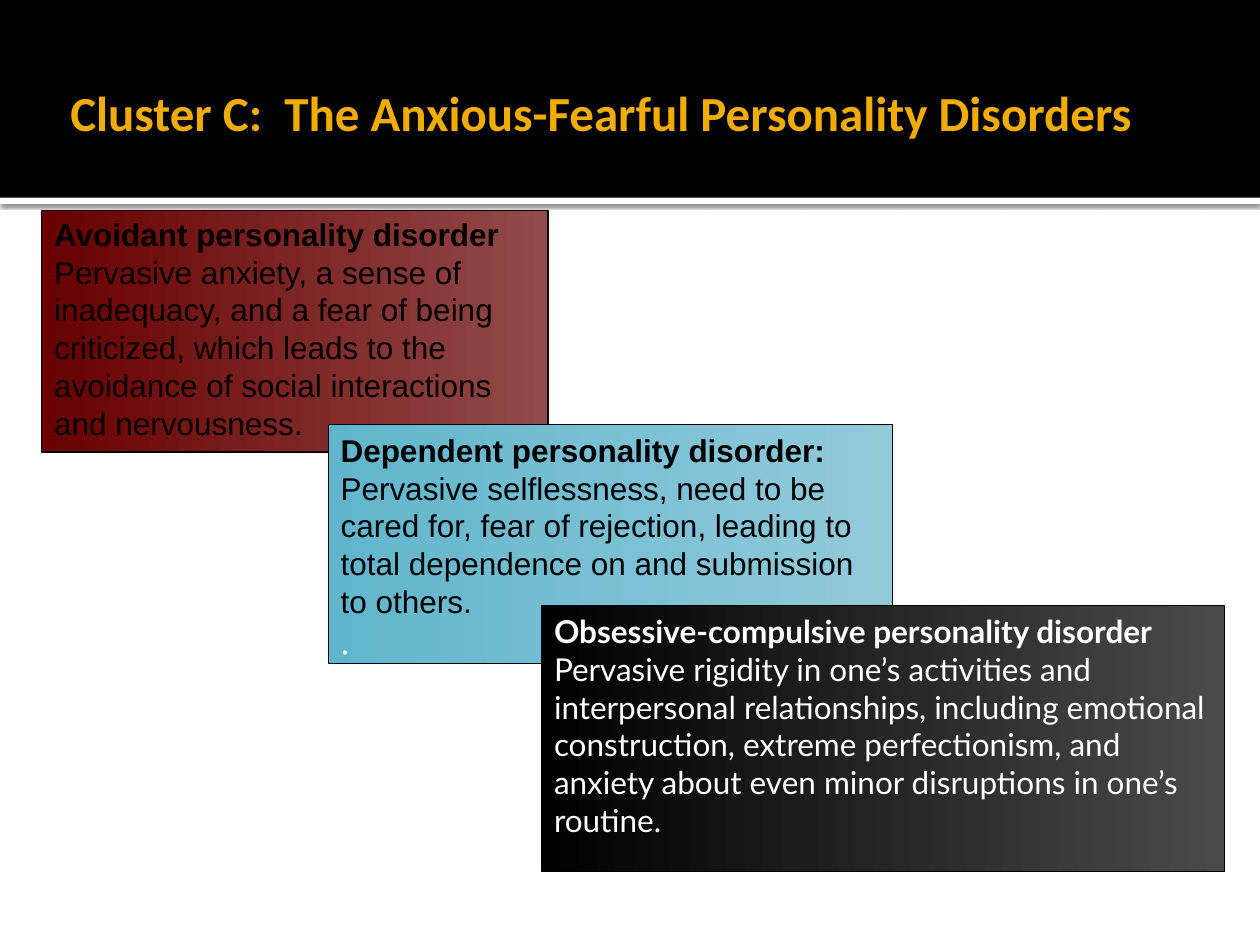
from lxml import etree
from pptx import Presentation
from pptx import util as u
from pptx.dml.color import RGBColor
from pptx.enum import shapes, text
from pptx.oxml import ns

Pt = u.Pt
COLORS = {
    "black": "000000", "white": "FFFFFF", "gold": "F0AD00",
    "red": "680000", "pale red": "924A4A",
    "blue": "60B5CC", "pale blue": "92CADA",
    "gray": "4A4A4A",
}


def color(name):
    return RGBColor.from_string(COLORS[name])


def add_rectangle(left, top, width, height):
    """Add a rectangle without shadow; lengths are in points."""
    box = slide.shapes.add_shape(shapes.MSO_SHAPE.RECTANGLE,
                                 Pt(left), Pt(top), Pt(width), Pt(height))
    box.shadow.inherit = False
    return box


deck = Presentation()
deck.slide_width, deck.slide_height = Pt(720), Pt(540)
slide = deck.slides.add_slide(deck.slide_layouts[6])

# Header band above a white strip that casts a soft shadow
strip = add_rectangle(0, 113, 720, 3.6)
header = add_rectangle(0, 0, 720, 113)
for band, name in ((strip, "white"), (header, "black")):
    band.fill.solid()
    band.fill.fore_color.rgb = color(name)
    band.line.fill.background()

effects = strip._element.spPr.find(ns.qn("a:effectLst"))
shadow = etree.SubElement(effects, ns.qn("a:outerShdw"), blurRad=str(Pt(2.5)),
                          dist=str(Pt(0.8)), dir="5400000", rotWithShape="0")
tone = etree.SubElement(shadow, ns.qn("a:srgbClr"), val=COLORS["black"])
etree.SubElement(tone, ns.qn("a:alpha"), val="60000")

title = slide.shapes.add_textbox(Pt(33.1), Pt(25.9), Pt(660.2), Pt(76.3))
frame = title.text_frame
frame.word_wrap = True
frame.vertical_anchor = text.MSO_ANCHOR.MIDDLE
frame.margin_right = Pt(3.6)
frame.text = "Cluster C:  The Anxious-Fearful Personality Disorders"
font = frame.paragraphs[0].runs[0].font
font.name, font.size, font.bold = "Calibri", Pt(28), True
font.color.rgb = color("gold")

# Each disorder: position, gradient, paragraphs of runs
# A run is (text, font, size, colour, bold)
disorders = [
    ((23.8, 120.2, 289.4, 138.2), ("red", "pale red"), [
        [("Avoidant personality disorder", "Arial", 18, "black", True)],
        [("Pervasive anxiety, a sense of inadequacy, and a fear of being "
          "criticized, which leads to the avoidance of social interactions "
          "and nervousness.", "Arial", 18, "black", False)],
    ]),
    ((187.5, 242.6, 322.6, 136.6), ("blue", "pale blue"), [
        [("Dependent personality disorder:", "Arial", 18, "black", True),
         (" Pervasive selflessness, need to be cared for, fear of rejection, "
          "leading to total dependence on and submission to others.",
          "Arial", 18, "black", False)],
        [(".", "Times New Roman", 20, "white", False)],
    ]),
    ((309.5, 346.2, 390.3, 152), ("black", "gray"), [
        [("Obsessive-compulsive personality disorder",
          "Lato", 18, "white", True),
         (" Pervasive rigidity in one’s activities and interpersonal "
          "relationships, including emotional construction, extreme "
          "perfectionism, and anxiety about even minor disruptions in one’s "
          "routine.", "Lato", 18, "white", False)],
    ]),
]

for place, gradient, paragraphs in disorders:
    box = add_rectangle(*place)
    box.fill.gradient()
    box.fill.gradient_angle = 0
    for stop, name, position in zip(box.fill.gradient_stops, gradient, (0, 1)):
        stop.color.rgb = color(name)
        stop.position = position
    box.line.color.rgb = color("black")
    box.line.width = Pt(0.75)

    frame = box.text_frame
    frame.word_wrap = True
    frame.vertical_anchor = text.MSO_ANCHOR.TOP
    for index, runs in enumerate(paragraphs):
        para = frame.add_paragraph() if index else frame.paragraphs[0]
        para.alignment = text.PP_ALIGN.LEFT
        for words, face, size, name, bold in runs:
            span = para.add_run()
            span.text = words
            span.font.name, span.font.size = face, Pt(size)
            span.font.bold = bold
            span.font.color.rgb = color(name)
    if place == disorders[0][0]:
        frame.vertical_anchor = text.MSO_ANCHOR.MIDDLE
        frame.margin_top = 0

deck.save("out.pptx")
